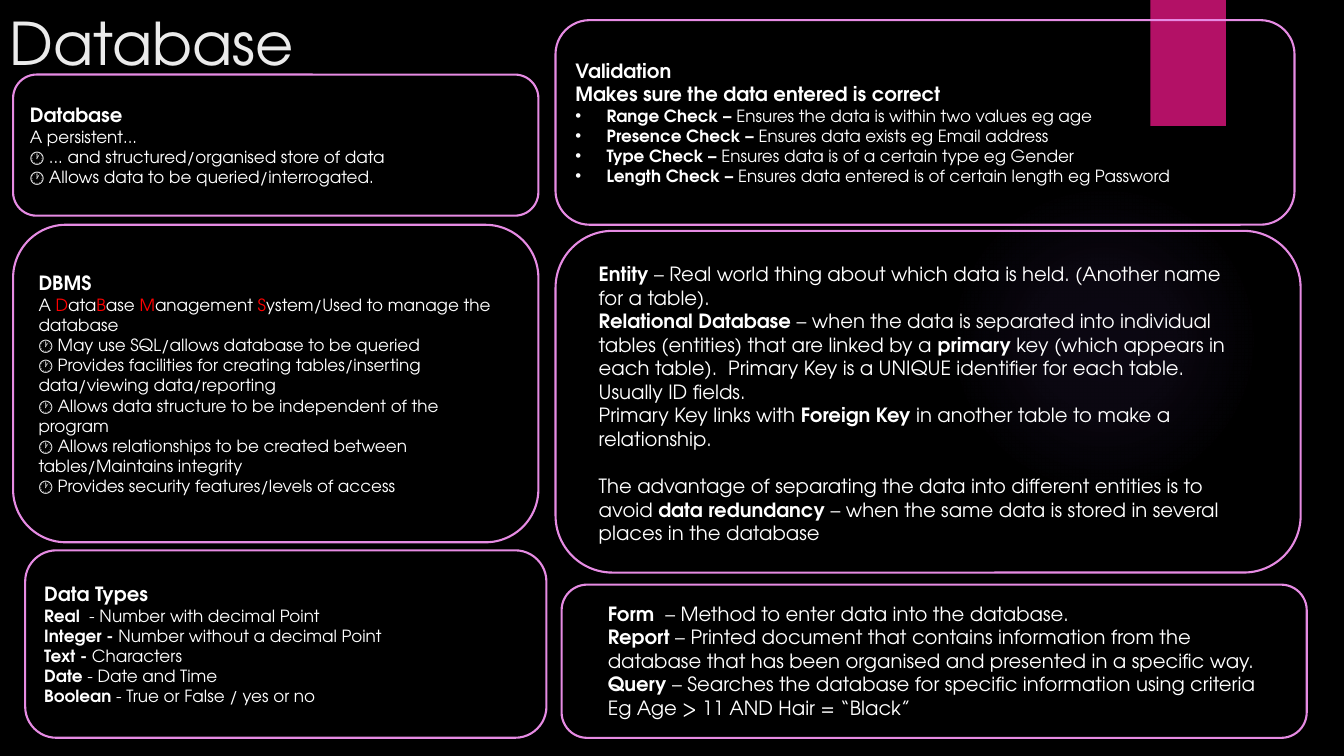
from lxml import etree
from pptx import Presentation
from pptx.dml.color import RGBColor
from pptx.enum.shapes import MSO_SHAPE
from pptx.enum.text import MSO_ANCHOR, PP_ALIGN
from pptx.oxml import parse_xml
from pptx.oxml.ns import nsdecls, qn
from pptx.util import Inches, Pt

RECT, ROUND, OVAL = MSO_SHAPE.RECTANGLE, MSO_SHAPE.ROUNDED_RECTANGLE, MSO_SHAPE.OVAL
TOP, MIDDLE, LEFT = MSO_ANCHOR.TOP, MSO_ANCHOR.MIDDLE, PP_ALIGN.LEFT
FONT = "TeX Gyre Adventor"
COLORS = {"back": "000000", "title": "EBEBEB", "text": "FFFFFF", "initial": "FF0000",
          "outline": "E68BE3", "ribbon": "B31166", "glow": "9B6BF2"}
HEAD, BODY = 14, 12

DATABASE = [
    "*Database*",
    "A persistent...",
    "🕐 ... and structured/organised store of data",
    "🕐 Allows data to be queried/interrogated.",
]
DBMS = [
    "*DBMS*",
    "A ~D~ata~B~ase ~M~anagement ~S~ystem/Used to manage the database",
    "🕐 May use SQL/allows database to be queried",
    "🕐 Provides facilities for creating tables/inserting data/viewing data/reporting",
    "🕐 Allows data structure to be independent of the program",
    "🕐 Allows relationships to be created between tables/Maintains integrity",
    "🕐 Provides security features/levels of access",
]
DATA_TYPES = [
    "*Data Types*",
    "*Real * - Number with decimal Point",
    "*Integer - *Number without a decimal Point",
    "*Text - *Characters",
    "*Date *- Date and Time",
    "*Boolean* - True or False / yes or no",
]
VALIDATION = [
    "*Validation*",
    "*Makes sure the data entered is correct*",
    "*Range Check – *Ensures the data is within two values eg age",
    "*Presence Check – *Ensures data exists eg Email address",
    "*Type Check – *Ensures data is of a certain type eg Gender",
    "*Length Check – *Ensures data entered is of certain length eg Password",
]
ENTITIES = [
    "*Entity* – Real world thing about which data is held. (Another name for a table).",
    "*Relational Database *– when the data is separated into individual tables (entities) "
    "that are linked by a *primary* key (which appears in each table).  Primary Key is a "
    "UNIQUE identifier for each table. Usually ID fields.",
    "Primary Key links with *Foreign Key *in another table to make a relationship.",
    "The advantage of separating the data into different entities is to avoid "
    "*data redundancy *– when the same data is stored in several places in the database",
]
INTERFACE = [
    "*Form * – Method to enter data into the database.",
    "*Report* – Printed document that contains information from the database that has "
    "been organised and presented in a specific way.",
    "*Query* – Searches the database for specific information using criteria",
    "Eg Age > 11 AND Hair = “Black”",
]


def rgb(name):
    return RGBColor.from_string(COLORS[name])


def add_runs(p, text, size, color):
    for i, part in enumerate(text.split("*")):
        for j, piece in enumerate(part.split("~")):
            if not piece:
                continue
            r = p.add_run()
            r.text = piece
            style = {"name": FONT, "size": Pt(size), "bold": i % 2 == 1}
            for key, value in style.items():
                setattr(r.font, key, value)
            r.font.color.rgb = rgb("initial" if j % 2 else color)


def add_bullet(p):
    pPr = p._p.get_or_add_pPr()
    pPr.set("marL", str(Inches(0.31)))
    pPr.set("indent", str(-Inches(0.31)))
    etree.SubElement(pPr, qn("a:buFont")).set("typeface", "Arial")
    etree.SubElement(pPr, qn("a:buChar")).set("char", "•")


def write(tf, lines, sizes, anchor=TOP, color="text", bullets_from=None, gap_at=None):
    tf.word_wrap = True
    tf.vertical_anchor = anchor
    for i, (text, size) in enumerate(zip(lines, sizes)):
        p = tf.paragraphs[0] if i == 0 else tf.add_paragraph()
        p.alignment = LEFT
        if i == gap_at:
            p.space_before = Pt(17)
        if bullets_from is not None and i >= bullets_from:
            add_bullet(p)
        add_runs(p, text, size, color)


def add_shape(s, kind, box):
    sp = s.shapes.add_shape(kind, *map(Inches, box))
    sp.shadow.inherit = False
    return sp


def add_glow(s, box):
    sp = add_shape(s, OVAL, box)
    sp.line.fill.background()
    stops = "".join(
        f'<a:gs pos="{pos * 1000}"><a:srgbClr val="{COLORS["glow"]}">'
        f'<a:alpha val="{alpha * 1000}"/></a:srgbClr></a:gs>'
        for pos, alpha in ((0, 7), (36, 6), (69, 0), (100, 0)))
    grad = parse_xml(
        f'<a:gradFill {nsdecls("a")}><a:gsLst>{stops}</a:gsLst><a:path path="circle">'
        '<a:fillToRect l="50000" t="50000" r="50000" b="50000"/></a:path></a:gradFill>')
    sp._element.spPr.find(qn("a:prstGeom")).addnext(grad)


def add_ribbon(s, box):
    sp = add_shape(s, RECT, box)
    sp.fill.solid()
    sp.fill.fore_color.rgb = rgb("ribbon")
    sp.line.fill.background()


def add_panel(s, box, lines=(), heads=1, bullets_from=None):
    sp = add_shape(s, ROUND, box)
    sp.fill.background()
    sp.line.color.rgb = rgb("outline")
    sp.line.width = Pt(1.5)
    sizes = [HEAD if i < heads else BODY for i in range(len(lines))]
    write(sp.text_frame, lines, sizes, MIDDLE, bullets_from=bullets_from)


def add_text(s, box, lines, size=HEAD, color="text", gap_at=None):
    tb = s.shapes.add_textbox(*map(Inches, box))
    write(tb.text_frame, lines, [size] * len(lines), color=color, gap_at=gap_at)


def main():
    prs = Presentation()
    prs.slide_width, prs.slide_height = Inches(13.33), Inches(7.5)
    s = prs.slides.add_slide(prs.slide_layouts[6])
    s.background.fill.solid()
    s.background.fill.fore_color.rgb = rgb("back")

    add_glow(s, (9.41, 1.83, 3.08, 3.08))
    add_ribbon(s, (11.41, 0, 0.75, 1.25))
    add_text(s, (0, 0.02, 6.23, 1.08), ["Database"], 42, "title")
    add_panel(s, (5.51, 0.2, 7.33, 2.03), VALIDATION, heads=2, bullets_from=2)
    add_panel(s, (0.13, 2.23, 5.21, 3.15), DBMS)
    add_panel(s, (5.51, 2.29, 7.39, 3.39))
    add_panel(s, (0.13, 0.74, 5.21, 1.4), DATABASE)
    add_panel(s, (0.25, 5.46, 5.17, 1.86), DATA_TYPES)
    add_text(s, (5.84, 2.55, 6.67, 2.96), ENTITIES, gap_at=3)
    add_panel(s, (5.57, 5.8, 7.39, 1.52))
    add_text(s, (5.93, 5.92, 6.67, 1.28), INTERFACE)
    prs.save("out.pptx")


if __name__ == "__main__":
    main()
